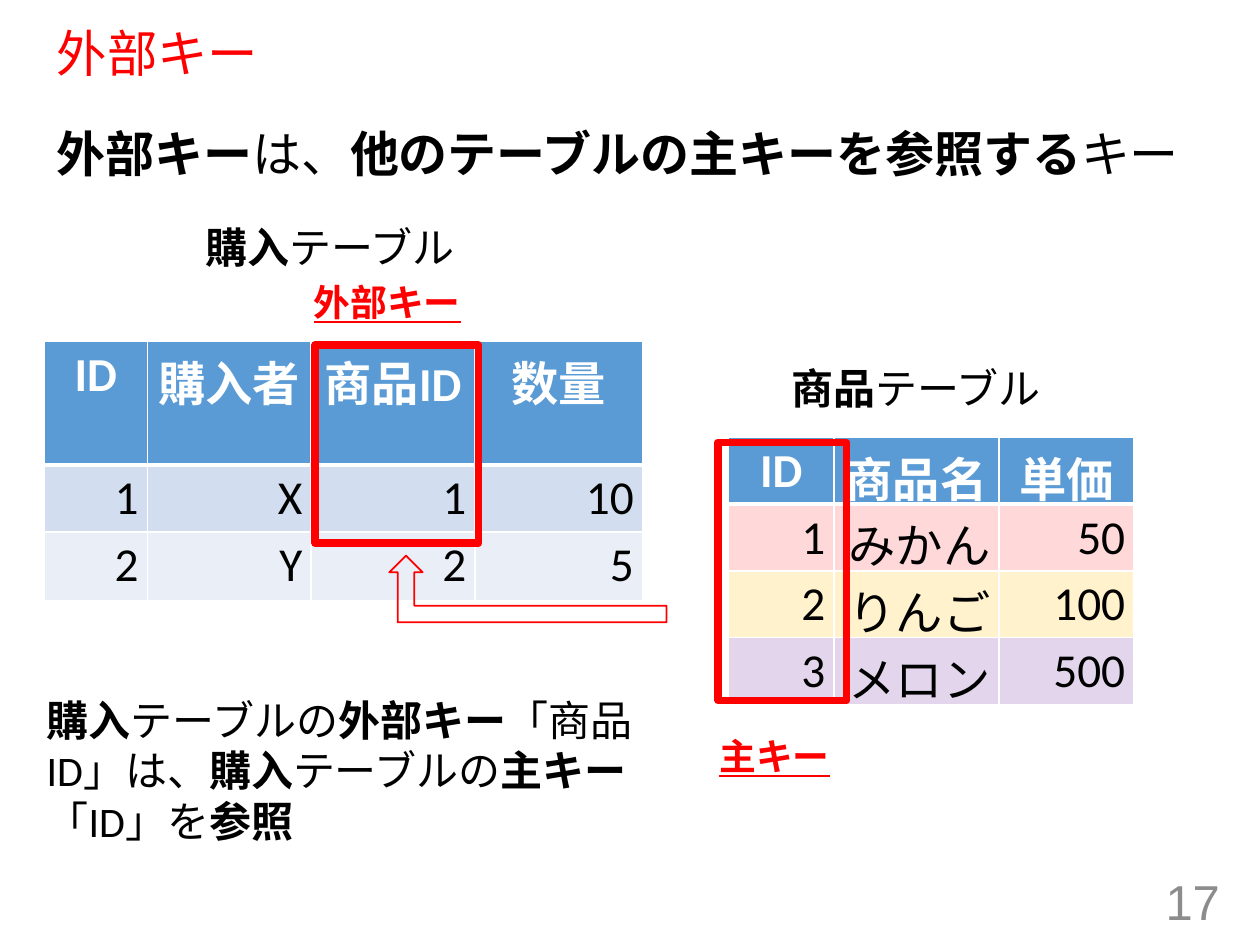
from dataclasses import dataclass

from lxml.etree import SubElement
from pptx import Presentation
from pptx.dml.color import RGBColor
from pptx.enum.shapes import MSO_SHAPE as Shape
from pptx.enum.text import MSO_ANCHOR as Anchor, PP_ALIGN as Align
from pptx.oxml.ns import qn
from pptx.util import Inches, Pt


@dataclass(frozen=True)
class Theme:
    """Colours, fonts and type sizes of the slide."""
    red: str = "FF0000"
    black: str = "000000"
    white: str = "FFFFFF"
    grey: str = "8C8C8C"
    header: str = "5B9BD5"
    bands: tuple = (("D2DEEF", 100), ("EAEFF7", 100))
    fruits: tuple = (("FF0000", 15), ("FFC000", 20), ("7030A0", 20))
    head_font: str = "Arial"
    body_font: str = "Calibri"
    asian_font: str = "Noto Sans CJK JP"
    title: float = 28.8
    lead: float = 28
    cell: float = 27
    text: float = 24
    label: float = 21
    frame: float = 4.25
    rule: float = 1
    header_rule: float = 3


@dataclass(frozen=True)
class Box:
    """A rectangle counted in units of a 100 by 75 grid over the slide."""
    x: float
    y: float
    w: float
    h: float

    def sub(self, x, y, w, h):
        """Return a box offset from this one's corner."""
        return Box(self.x + x, self.y + y, w, h)

    def emu(self):
        """Return left, top, width and height as lengths."""
        return [unit(n) for n in (self.x, self.y, self.w, self.h)]


T = Theme()
SLIDE = Box(0, 0, 100, 75)
TIGHT = (0.7, 0.4)
LOOSE = (1, 0.5)


def unit(n):
    """Convert grid units to a length."""
    return Inches(n / 10)


def write(tf, text, size=T.text, font=T.body_font, color=T.black, bold=False,
          underline=False, align=Align.LEFT, anchor=Anchor.TOP,
          before=0, spacing=None, inset=TIGHT):
    """Fill a text frame, switching weight at each ** mark."""
    tf.word_wrap = True
    tf.vertical_anchor = anchor
    tf.margin_left = tf.margin_right = unit(inset[0])
    tf.margin_top = tf.margin_bottom = unit(inset[1])
    p = tf.paragraphs[0]
    p.alignment, p.space_before, p.line_spacing = align, Pt(before), spacing
    for i, part in enumerate(text.split("**")):
        if part:
            r = p.add_run()
            r.text = part
            r.font.size, r.font.name = Pt(size), font
            r.font.bold = bold != bool(i % 2)
            r.font.underline = underline
            r.font.color.rgb = RGBColor.from_string(color)
            SubElement(r.font._element, qn("a:ea"), typeface=T.asian_font)


def add_text(s, box, text, **fmt):
    """Add a text box."""
    write(s.shapes.add_textbox(*box.emu()).text_frame, text, **fmt)


def add_label(s, box, text):
    """Add an underlined red key label."""
    add_text(s, box, text, size=T.label, color=T.red, bold=True,
             underline=True, before=10)


def add_outline(s, kind, box, width):
    """Add an unfilled red shape."""
    sp = s.shapes.add_shape(kind, *box.emu())
    sp.shadow.inherit = False
    sp.fill.background()
    sp.line.color.rgb = RGBColor.from_string(T.red)
    sp.line.width = Pt(width)
    return sp


def style_cell(cell, fill, alpha, top, bottom):
    """Set a cell's white borders and its fill."""
    tcPr = cell._tc.get_or_add_tcPr()
    widths = {"lnL": T.rule, "lnR": T.rule, "lnT": top, "lnB": bottom}
    for tag, width in widths.items():
        ln = SubElement(tcPr, qn(f"a:{tag}"), w=str(Pt(width)))
        SubElement(SubElement(ln, qn("a:solidFill")), qn("a:srgbClr"), val=T.white)
    cell.fill.solid()
    cell.fill.fore_color.rgb = RGBColor.from_string(fill)
    if alpha < 100:
        color = tcPr.find(qn("a:solidFill")).find(qn("a:srgbClr"))
        SubElement(color, qn("a:alpha"), val=str(alpha * 1000))


def add_grid(s, box, cols, row_heights, rows, fills):
    """Add a table with a header row and one fill for each data row."""
    table = s.shapes.add_table(len(rows), len(cols), *box.emu()).table
    for col, width in zip(table.columns, cols):
        col.width = unit(width)
    for row, height in zip(table.rows, row_heights):
        row.height = unit(height)
    for i, (values, fill) in enumerate(zip(rows, ((T.header, 100), *fills))):
        head = i == 0
        for j, value in enumerate(values):
            cell = table.cell(i, j)
            style_cell(cell, *fill, T.header_rule if i == 1 else T.rule,
                       T.header_rule if head else T.rule)
            write(cell.text_frame, value, size=T.cell, bold=head,
                  color=T.white if head else T.black,
                  align=Align.CENTER if head else Align.RIGHT)
            cell.margin_left = cell.margin_right = unit(TIGHT[0])
            cell.margin_top = cell.margin_bottom = unit(TIGHT[1])


def heading(s, box):
    """Place the title and the lead sentence."""
    title = s.shapes.title
    title.left, title.top, title.width, title.height = box.sub(0, 0, box.w, 5.1).emu()
    write(title.text_frame, "外部キー", size=T.title, font=T.head_font, color=T.red,
          anchor=Anchor.MIDDLE, spacing=0.9, inset=LOOSE)
    add_text(s, box.sub(0, 7.4, box.w, 8), "**外部キー**は、**他のテーブルの主キーを参照する**キー",
             size=T.lead, font=T.head_font, before=10, inset=LOOSE)


def product_table(s, box):
    """Place the product table with its primary key marked."""
    rows = [("ID", "商品名", "単価"), ("1", "みかん", "50"),
            ("2", "りんご", "100"), ("3", "メロン", "500")]
    add_grid(s, box.sub(1.4, 6.3, 32.2, 21), (8.4, 13.1, 10.7),
             (0, 4.2, 4.2, 4.2), rows, T.fruits)
    add_outline(s, Shape.RECTANGLE, box.sub(0.6, 6.7, 10.2, 20.5), T.frame)
    add_label(s, box.sub(0, 29.4, 26.8, 4.8), "主キー")
    add_text(s, box.sub(5.7, 0, 29.4, 4.8), "**商品**テーブル", before=10)


def purchase_table(s, box):
    """Place the purchase table with its foreign key marked."""
    rows = [("ID", "購入者", "商品ID", "数量"), ("1", "X", "1", "10"),
            ("2", "Y", "2", "5")]
    add_grid(s, box.sub(0, 9.9, 47.5, 16), (8.2, 13, 13, 13.3),
             (5.3, 5.3, 5.5), rows, T.bands)
    add_outline(s, Shape.RECTANGLE, box.sub(21.5, 10.2, 13, 15.7), T.frame)
    arrow = add_outline(s, Shape.BENT_UP_ARROW, box.sub(27.4, 26.9, 22, 5.3), T.rule)
    arrow._element.spPr.xfrm.set("flipH", "1")
    add_label(s, box.sub(20.7, 4.6, 26.8, 4.8), "外部キー")
    add_text(s, box.sub(12.1, 0, 29.4, 4.8), "**購入**テーブル", before=10)


def explanation(s, box):
    """Place the closing sentence."""
    add_text(s, box, "**購入**テーブルの**外部キー**「商品ID」は、"
             "**購入**テーブルの**主キー**「ID」を**参照**", before=10)


def page_number(s, box):
    """Place the page number."""
    add_text(s, box, "17", size=T.lead, font=T.head_font, color=T.grey,
             align=Align.RIGHT, anchor=Anchor.MIDDLE, inset=LOOSE)


def main():
    """Build and save the slide."""
    prs = Presentation()
    prs.slide_width, prs.slide_height = unit(SLIDE.w), unit(SLIDE.h)
    s = prs.slides.add_slide(prs.slide_layouts[5])
    heading(s, SLIDE.sub(3.5, 1.9, 92.5, 15))
    page_number(s, SLIDE.sub(75.3, 69.5, 22.5, 4))
    product_table(s, SLIDE.sub(56.4, 28.4, 35.1, 34.2))
    purchase_table(s, SLIDE.sub(3.5, 17.2, 49.4, 32.2))
    explanation(s, SLIDE.sub(3, 54.7, 49.9, 18.8))
    prs.save("out.pptx")


if __name__ == "__main__":
    main()
